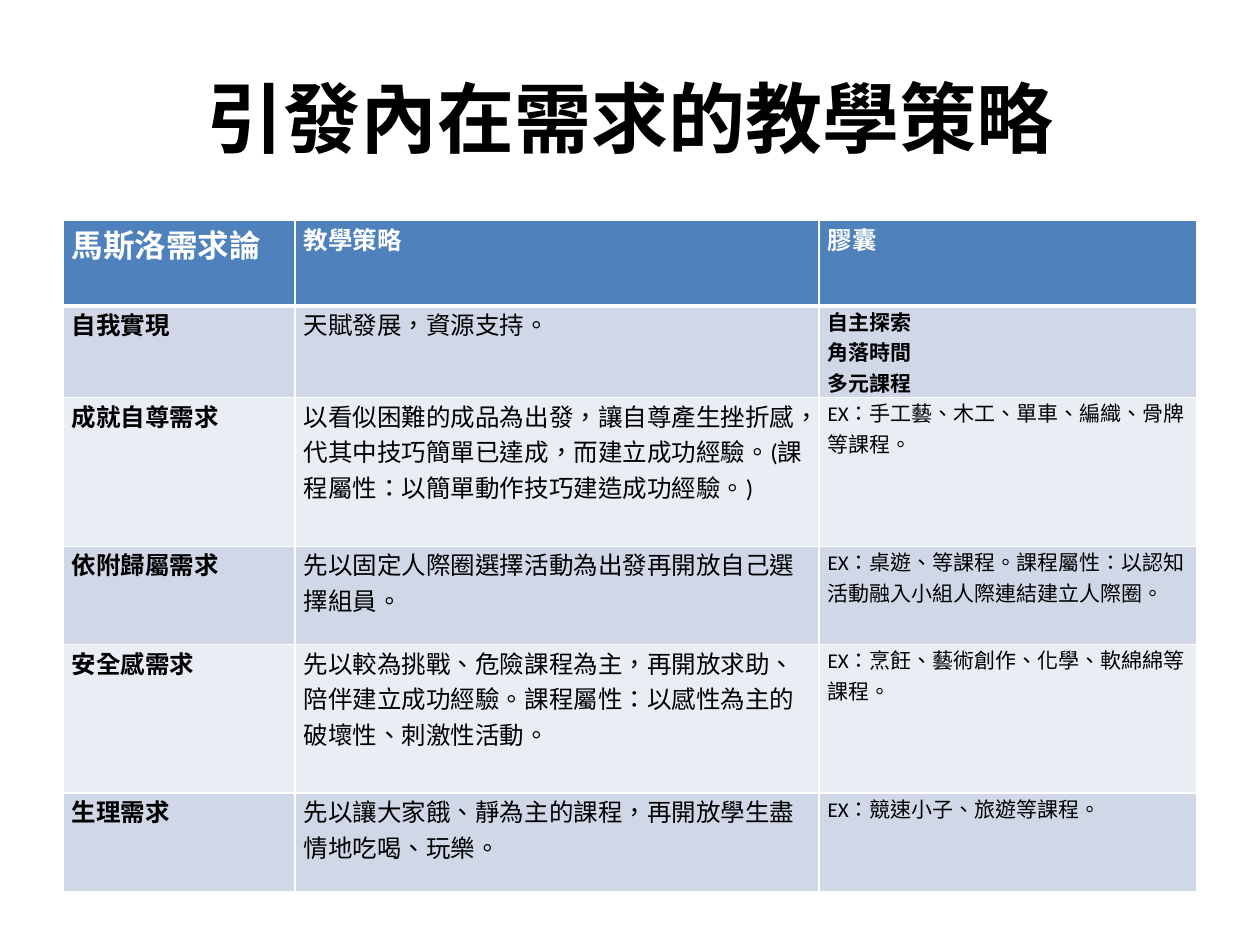
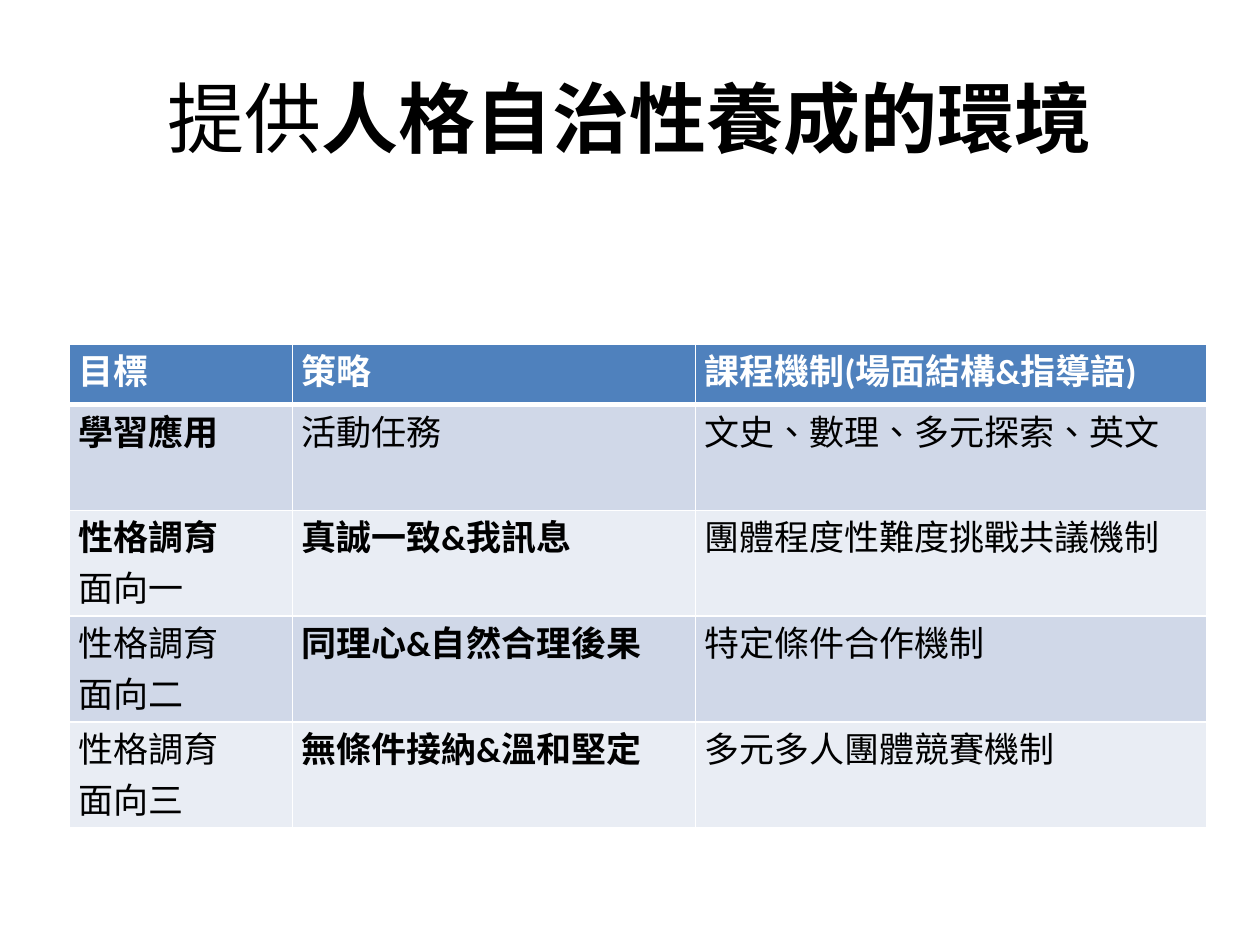
from dataclasses import dataclass
from functools import partial

from lxml import etree
from pptx import Presentation
from pptx.dml.color import RGBColor
from pptx.enum.lang import MSO_LANGUAGE_ID
from pptx.enum.text import MSO_ANCHOR, PP_ALIGN
from pptx.oxml.ns import qn
from pptx.util import Inches, Pt

CENTER, TOP, MIDDLE = PP_ALIGN.CENTER, MSO_ANCHOR.TOP, MSO_ANCHOR.MIDDLE
CHINESE = MSO_LANGUAGE_ID.TRADITIONAL_CHINESE
TITLE_ONLY = 5

# Shared style
WHITE, BLACK, HEADER = "FFFFFF", "000000", "4F81BD"
BANDS = ("D0D8E8", "E9EDF4")
THIN, THICK = 1, 3
GRID_COLUMNS, GRID_ROWS = 100, 75


def colour(code):
    return RGBColor.from_string(code)


@dataclass
class Span:
    text: str
    bold: bool = False
    size: float = 14
    font: str = "Calibri"


class Page:
    """The shared style and the current slide."""

    def __init__(self, deck):
        self.deck = deck
        self.slide = deck.slides.add_slide(deck.slide_layouts[TITLE_ONLY])

    def place(self, left, top, width, height):
        """Turn grid columns and rows into lengths."""
        column = self.deck.slide_width / GRID_COLUMNS
        row = self.deck.slide_height / GRID_ROWS
        return [round(n * unit) for n, unit in
                ((left, column), (top, row), (width, column), (height, row))]

    def add_span(self, para, span, ink):
        run = para.add_run()
        run.text = span.text
        run.font.name = span.font
        run.font.size = Pt(span.size)
        run.font.bold = span.bold
        run.font.color.rgb = colour(ink)
        run.font.language_id = CHINESE

    def title(self, *spans):
        box = self.slide.shapes.title
        box.left, box.top, box.width, box.height = self.place(5, 3, 90, 12.5)
        box.text_frame.vertical_anchor = MIDDLE
        para = box.text_frame.paragraphs[0]
        para.alignment = CENTER
        for span in spans:
            self.add_span(para, span, BLACK)

    def borders(self, cell, top, bottom):
        widths = {"a:lnL": THIN, "a:lnR": THIN, "a:lnT": top, "a:lnB": bottom}
        properties = cell._tc.get_or_add_tcPr()
        for index, (side, width) in enumerate(widths.items()):
            line = etree.Element(qn(side), w=str(Pt(width)))
            fill = etree.SubElement(line, qn("a:solidFill"))
            etree.SubElement(fill, qn("a:srgbClr"), val=WHITE)
            properties.insert(index, line)

    def cell(self, cell, spans, row):
        """Fill one cell; each span is a paragraph."""
        cell.margin_left = cell.margin_right = Inches(0.07)
        cell.margin_top = cell.margin_bottom = 0
        cell.vertical_anchor = TOP
        cell.fill.solid()
        cell.fill.fore_color.rgb = colour(BANDS[(row - 1) % 2] if row else HEADER)
        self.borders(cell, THICK if row == 1 else THIN, THIN if row else THICK)
        frame = cell.text_frame
        for number, span in enumerate(spans):
            para = frame.add_paragraph() if number else frame.paragraphs[0]
            self.add_span(para, span, BLACK if row else WHITE)

    def table(self, left, top, widths, heights, content):
        area = self.place(left, top, sum(widths), sum(heights))
        table = self.slide.shapes.add_table(len(heights), len(widths), *area).table
        table.horz_banding = False
        for column, width in zip(table.columns, widths):
            column.width = self.place(0, 0, width, 0)[2]
        for row, height in zip(table.rows, heights):
            row.height = self.place(0, 0, 0, height)[3]
        for row, cells in enumerate(content):
            for column, spans in enumerate(cells):
                self.cell(table.cell(row, column), spans, row)


def needs_page(deck):
    page = Page(deck)
    page.title(Span("引發內在需求的教學策略", True, 44))

    # Needs, strategies and capsules
    head = partial(Span, bold=True)
    note = partial(Span, size=12)
    capsules = ("自主探索", "角落時間", "多元課程")
    page.table(5, 17.5, (18.4, 41.6, 30), (6.8, 6.8, 11.8, 7.8, 11.8, 7.8), [
        [[head("馬斯洛需求論", size=18)], [head("教學策略")], [head("膠囊")]],
        [[head("自我實現")],
         [Span("天賦發展，資源支持。", font="Arial")],
         [note(name, bold=True) for name in capsules]],
        [[head("成就自尊需求")],
         [Span("以看似困難的成品為出發，讓自尊產生挫折感，代其中技巧簡單已達成，"
               "而建立成功經驗。(課程屬性：以簡單動作技巧建造成功經驗。)")],
         [note("EX：手工藝、木工、單車、編織、骨牌等課程。")]],
        [[head("依附歸屬需求")],
         [Span("先以固定人際圈選擇活動為出發再開放自己選擇組員。")],
         [note("EX：桌遊、等課程。課程屬性：以認知活動融入小組人際連結建立人際圈。")]],
        [[head("安全感需求")],
         [Span("先以較為挑戰、危險課程為主，再開放求助、陪伴建立成功經驗。"
               "課程屬性：以感性為主的破壞性、刺激性活動。")],
         [note("EX：烹飪、藝術創作、化學、軟綿綿等課程。")]],
        [[head("生理需求")],
         [Span("先以讓大家餓、靜為主的課程，再開放學生盡情地吃喝、玩樂。")],
         [note("EX：競速小子、旅遊等課程。")]],
    ])


def character_page(deck):
    page = Page(deck)
    page.title(Span("提供", size=44), Span("人格自治性養成的環境", True, 44))

    # Goals, strategies and course mechanisms
    plain = partial(Span, size=20)
    strong = partial(Span, size=20, bold=True)
    page.table(5.5, 27.3, (17.7, 32, 40.6), [4.8] + [8.4] * 4, [
        [[strong("目標")], [strong("策略")], [strong("課程機制(場面結構&指導語)")]],
        [[strong("學習應用")], [plain("活動任務")],
         [plain("文史、數理、多元探索、英文")]],
        [[strong("性格調育"), plain("面向一")], [strong("真誠一致&我訊息")],
         [plain("團體程度性難度挑戰共議機制")]],
        [[plain("性格調育"), plain("面向二")], [strong("同理心&自然合理後果")],
         [plain("特定條件合作機制")]],
        [[plain("性格調育"), plain("面向三")], [strong("無條件接納&溫和堅定")],
         [plain("多元多人團體競賽機制")]],
    ])


def main():
    deck = Presentation()
    deck.slide_width, deck.slide_height = Inches(10), Inches(7.5)
    needs_page(deck)
    character_page(deck)
    deck.save("out.pptx")


if __name__ == "__main__":
    main()
